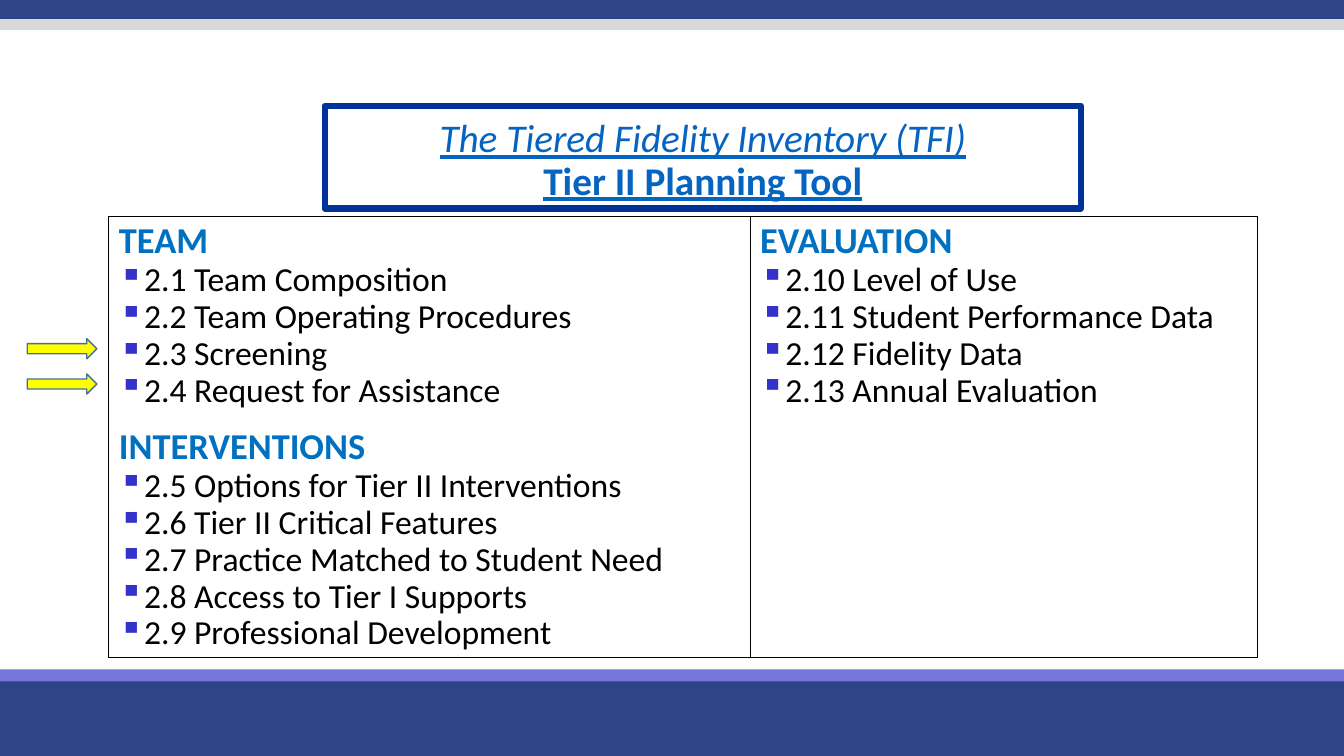
from lxml import etree
from pptx import Presentation
from pptx.dml.color import RGBColor
from pptx.enum.shapes import MSO_SHAPE
from pptx.enum.text import MSO_ANCHOR, MSO_AUTO_SIZE, PP_ALIGN
from pptx.oxml.ns import qn
from pptx.util import Inches, Pt

RECTANGLE, RIGHT_ARROW = MSO_SHAPE.RECTANGLE, MSO_SHAPE.RIGHT_ARROW
BOTTOM, CENTER, NO_FIT = MSO_ANCHOR.BOTTOM, PP_ALIGN.CENTER, MSO_AUTO_SIZE.NONE
FONT = "Calibri"


def color(hex_code):
    return RGBColor.from_string(hex_code)


def sub(parent, tag, **attributes):
    return etree.SubElement(parent, qn(tag), attributes)


prs = Presentation()
prs.slide_width, prs.slide_height = Inches(13.33), Inches(7.5)
slide = prs.slides.add_slide(prs.slide_layouts[5])

# Bands across the top and bottom
for top, height, fill in [(6.7, 0.8, "2E4488"), (6.64, 0.12, "7476DA"),
                          (-0.03, 0.22, "2E4488"), (0.19, 0.11, "D8D8D8")]:
    band = slide.shapes.add_shape(RECTANGLE, 0, Inches(top), prs.slide_width, Inches(height))
    band.shadow.inherit = False
    band.fill.solid()
    band.fill.fore_color.rgb = color(fill)
    band.line.fill.background()

# Arrows pointing at items 2.3 and 2.4
for top in (3.36, 3.71):
    arrow = slide.shapes.add_shape(RIGHT_ARROW, Inches(0.27), Inches(top), Inches(0.69), Inches(0.2))
    arrow.shadow.inherit = False
    arrow.fill.solid()
    arrow.fill.fore_color.rgb = color("FFFF00")
    arrow.line.color.rgb = color("42719B")
    arrow.line.width = Pt(1)

# Title box
title = slide.shapes.title
title.left, title.top, title.width, title.height = Inches(3.22), Inches(1.05), Inches(7.5), Inches(1.02)
title.fill.solid()
title.fill.fore_color.rgb = color("FFFFFF")
title.line.color.rgb = color("003399")
title.line.width = Pt(4.5)
title.text_frame.auto_size = NO_FIT
title.text_frame.word_wrap = True
title.text_frame.vertical_anchor = BOTTOM
heading = title.text_frame.paragraphs[0]
heading.alignment = CENTER
heading.line_spacing = 0.9
inventory = heading.add_run()
inventory.text = "The Tiered Fidelity Inventory (TFI)"
inventory.font.italic = True
heading.add_line_break()
tool = heading.add_run()
tool.text = "Tier II Planning Tool"
tool.font.bold = True
for run in (inventory, tool):
    run.font.name = FONT
    run.font.size = Pt(28)
    run.font.underline = True
    run.font.color.rgb = color("0563C1")

# Planning table: each column holds headed lists
columns = [
    (6.36, [
        ("TEAM", ["2.1 Team Composition", "2.2 Team Operating Procedures",
                  "2.3 Screening", "2.4 Request for Assistance"]),
        ("INTERVENTIONS", ["2.5 Options for Tier II Interventions",
                           "2.6 Tier II Critical Features",
                           "2.7 Practice Matched to Student Need",
                           "2.8 Access to Tier I Supports",
                           "2.9 Professional Development"]),
    ]),
    (5.03, [
        ("EVALUATION", ["2.10 Level of Use", "2.11 Student Performance Data",
                        "2.12 Fidelity Data", "2.13 Annual Evaluation"]),
    ]),
]
planner = slide.shapes.add_table(1, len(columns), Inches(1.08), Inches(2.15),
                                 Inches(11.39), Inches(4.26)).table
planner.first_row = planner.horz_banding = False

for index, (width, sections) in enumerate(columns):
    planner.columns[index].width = Inches(width)
    cell = planner.cell(0, index)
    cell_properties = cell._tc.get_or_add_tcPr()
    for side in ("a:lnL", "a:lnR", "a:lnT", "a:lnB"):
        border = sub(cell_properties, side, w=str(Pt(1)))
        sub(sub(border, "a:solidFill"), "a:srgbClr", val="000000")
    cell.fill.solid()
    cell.fill.fore_color.rgb = color("FFFFFF")

    paragraph = cell.text_frame.paragraphs[0]
    for number, (section, items) in enumerate(sections):
        if number:
            paragraph = cell.text_frame.add_paragraph()
            paragraph.space_before = Pt(13)
        paragraph.text = section
        paragraph.line_spacing = 0.9
        paragraph.font.name = FONT
        paragraph.font.size = Pt(26)
        paragraph.font.bold = True
        paragraph.font.color.rgb = color("0070C0")
        for item in items:
            entry = cell.text_frame.add_paragraph()
            entry.text = item
            entry.line_spacing = 0.9
            properties = entry._p.get_or_add_pPr()
            properties.set("marL", str(Inches(0.19)))
            properties.set("indent", str(-Inches(0.19)))
            sub(sub(properties, "a:buClr"), "a:srgbClr", val="3333CC")
            sub(properties, "a:buChar", char="▪")
            entry.font.name = FONT
            entry.font.size = Pt(24)
            entry.font.bold = False
            entry.font.color.rgb = color("000000")

prs.save("out.pptx")
